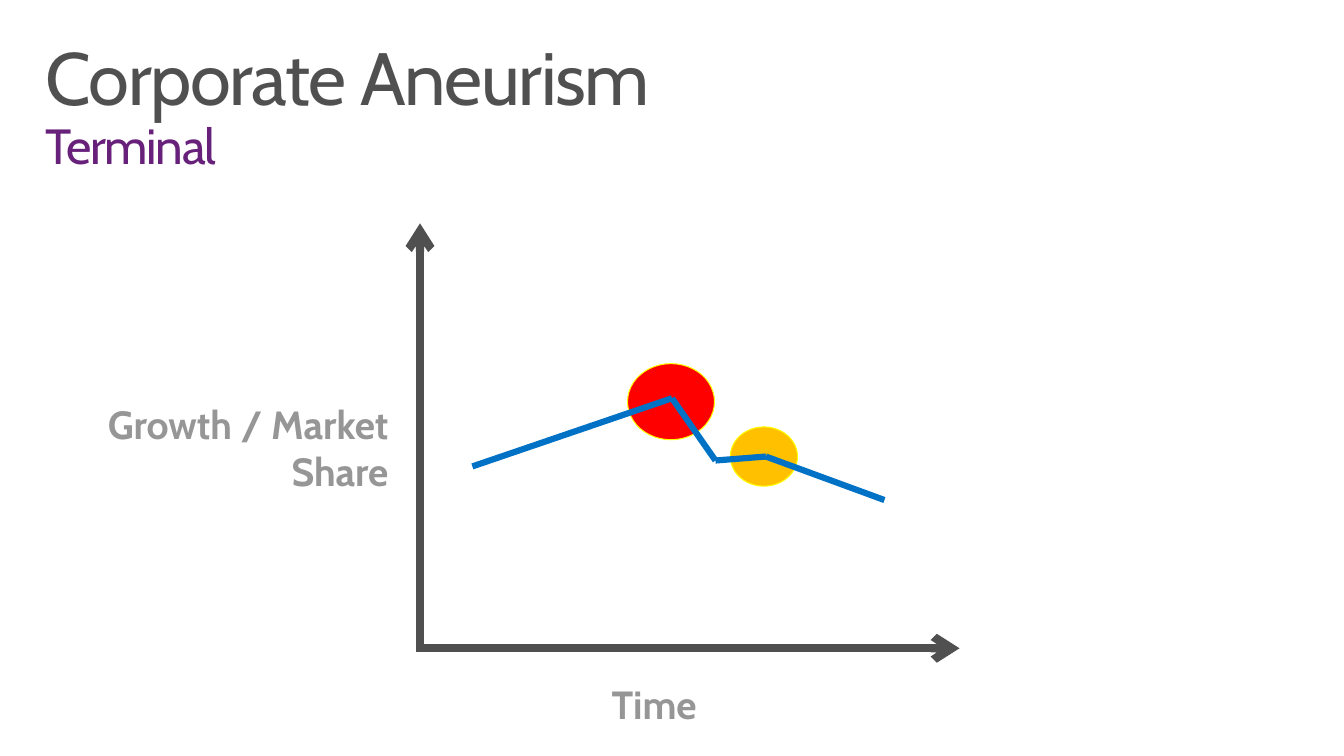
import itertools
from dataclasses import dataclass

import pptx
import pptx.dml.color
import pptx.enum.shapes
import pptx.enum.text
import pptx.oxml.ns
import pptx.util
from lxml import etree

Inches = pptx.util.Inches
Pt = pptx.util.Pt
Align = pptx.enum.text.PP_ALIGN


@dataclass(frozen=True)
class Theme:
    font: str = "Cabin"
    dark: str = "505050"
    purple: str = "68217A"
    grey: str = "969696"
    blue: str = "0072C6"
    red: str = "FF0000"
    amber: str = "FFC000"
    yellow: str = "FFFF00"
    title_size: float = 54
    subtitle_size: float = 36
    label_size: float = 28.6
    axis_width: float = 6
    trend_width: float = 4.5
    outline_width: float = 0.75


def rgb(value):
    return pptx.dml.color.RGBColor.from_string(value)


class SlideBuilder:
    def __init__(self, slide, theme):
        self.slide = slide
        self.theme = theme

    def text_frame(self, left, top, width, height, inset_x=0, inset_y=0):
        box = self.slide.shapes.add_textbox(
            Inches(left), Inches(top), Inches(width), Inches(height))
        frame = box.text_frame
        frame.word_wrap = True
        frame.margin_left = frame.margin_right = Inches(inset_x)
        frame.margin_top = frame.margin_bottom = Inches(inset_y)
        return frame

    def style_font(self, font, size, color, bold=False):
        font.name = self.theme.font
        font.size = Pt(size)
        font.bold = bold
        font.color.rgb = rgb(color)

    def title(self, heading, subheading):
        frame = self.text_frame(0.3, 0.32, 13, 1, 0.16, 0.1)
        paragraph = frame.paragraphs[0]
        paragraph.line_spacing = 0.9
        heading_run = paragraph.add_run()
        heading_run.text = heading
        paragraph.add_line_break()
        subheading_run = paragraph.add_run()
        subheading_run.text = subheading
        self.style_font(heading_run.font, self.theme.title_size, self.theme.dark)
        self.style_font(subheading_run.font, self.theme.subtitle_size, self.theme.purple)
        for run in paragraph.runs:
            run._r.get_or_add_rPr().set("spc", "-100")

    def label(self, text, left, top, width, height, alignment):
        frame = self.text_frame(left, top, width, height)
        frame.auto_size = pptx.enum.text.MSO_AUTO_SIZE.SHAPE_TO_FIT_TEXT
        paragraph = frame.paragraphs[0]
        paragraph.text = text
        paragraph.alignment = alignment
        self.style_font(paragraph.font, self.theme.label_size, self.theme.grey, True)

    def spot(self, left, top, width, height, color):
        ellipse = self.slide.shapes.add_shape(
            pptx.enum.shapes.MSO_SHAPE.OVAL,
            Inches(left), Inches(top), Inches(width), Inches(height))
        ellipse.shadow.inherit = False
        ellipse.fill.solid()
        ellipse.fill.fore_color.rgb = rgb(color)
        ellipse.line.color.rgb = rgb(self.theme.yellow)
        ellipse.line.width = Pt(self.theme.outline_width)

    def line(self, start, end, color, width):
        connector = self.slide.shapes.add_connector(
            pptx.enum.shapes.MSO_CONNECTOR.STRAIGHT,
            *map(Inches, start + end))
        connector.line.color.rgb = rgb(color)
        connector.line.width = Pt(width)
        etree.SubElement(connector._element.spPr, pptx.oxml.ns.qn("a:effectLst"))
        return connector

    def axis(self, start, end):
        connector = self.line(start, end, self.theme.dark, self.theme.axis_width)
        outline = connector.line._get_or_add_ln()
        etree.SubElement(outline, pptx.oxml.ns.qn("a:tailEnd"), type="arrow")

    def trend(self, points):
        for start, end in itertools.pairwise(points):
            self.line(start, end, self.theme.blue, self.theme.trend_width)


def main():
    presentation = pptx.Presentation()
    presentation.slide_width = Inches(13.6)
    presentation.slide_height = Inches(7.65)
    theme = Theme()
    builder = SlideBuilder(
        presentation.slides.add_slide(presentation.slide_layouts[6]), theme)

    builder.spot(7.39, 4.32, 0.68, 0.6, theme.amber)
    builder.spot(6.35, 3.68, 0.88, 0.77, theme.red)
    builder.title("Corporate Aneurism", "Terminal")
    builder.axis((4.25, 6.6), (4.25, 2.26))
    builder.axis((4.23, 6.56), (9.71, 6.56))
    builder.label("Growth / Market Share", 0.82, 4.05, 3.11, 0.96, Align.RIGHT)
    builder.label("Time", 4.71, 6.88, 3.82, 0.49, Align.CENTER)
    builder.trend([(4.78, 4.72), (6.8, 4.03), (7.24, 4.66), (7.75, 4.62), (8.95, 5.06)])

    presentation.save("out.pptx")


if __name__ == "__main__":
    main()
